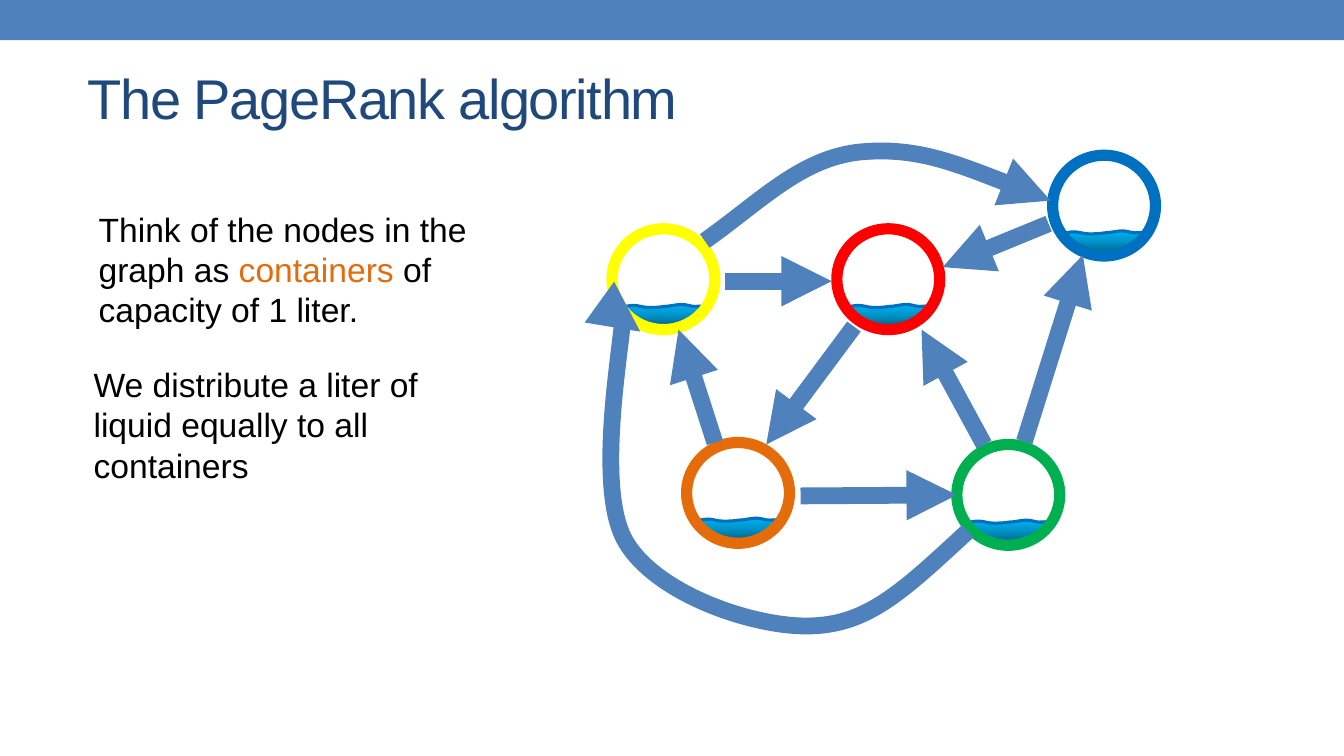
from copy import deepcopy

from lxml import etree
from pptx import Presentation
from pptx import util as u
from pptx.dml.color import RGBColor
from pptx.enum import shapes, text
from pptx.oxml.ns import qn

# Content: places are columns and rows of a grid of one-inch squares
COLUMNS, ROWS = 13.33, 7.5
BLUE, ORANGE, BLACK = "4F81BD", "E46C0A", "000000"
ARROW_WIDTH, RING_WIDTH, SURFACE_WIDTH = 12, 8, 2.25

CONTAINER_SIZE = (1.02, 1)
CONTAINERS = [  # left, top, ring colour
    (10.44, 1.54, "0070C0"),
    (9.49, 4.41, "00B050"),
    (6.81, 4.39, ORANGE),
    (6.07, 2.27, "FFFF00"),
    (8.3, 2.27, "FF0000"),
]

# Liquid outline, measured from its own corner: start, then cubic curves
LIQUID_OFFSET = (0.1, 0.75)
LIQUID_COLOURS = [(0, "00688E"), (0.5, "0094CA"), (1, "00B0F0")]
LIQUID = [
    (0, 0.03),
    (0.03, 0.02), (0.07, 0.01), (0.12, 0.01),
    (0.16, 0.01), (0.21, 0.03), (0.26, 0.03),
    (0.31, 0.03), (0.36, 0.03), (0.42, 0.02),
    (0.47, 0.02), (0.54, 0), (0.59, 0),
    (0.64, 0), (0.68, 0.02), (0.72, 0.02),
    (0.76, 0.02), (0.82, 0.01), (0.84, 0.02),
    (0.85, 0.03), (0.81, 0.06), (0.8, 0.07),
    (0.78, 0.09), (0.76, 0.1), (0.73, 0.12),
    (0.7, 0.13), (0.67, 0.15), (0.64, 0.17),
    (0.61, 0.18), (0.56, 0.2), (0.53, 0.2),
    (0.49, 0.2), (0.45, 0.21), (0.41, 0.21),
    (0.37, 0.21), (0.31, 0.2), (0.27, 0.2),
    (0.23, 0.19), (0.2, 0.18), (0.18, 0.17),
    (0.15, 0.16), (0.14, 0.15), (0.12, 0.14),
    (0.09, 0.12), (0.05, 0.09), (0.04, 0.08),
]

STRAIGHT_LINKS = [  # start, arrow tip
    ((10.4, 2.22), (9.35, 2.65)),
    ((10.16, 4.38), (10.74, 2.53)),
    ((9.76, 4.41), (9.14, 3.27)),
    ((7.94, 4.92), (9.49, 4.91)),
    ((7.09, 4.39), (6.73, 3.27)),
    ((7.19, 2.79), (8.25, 2.79)),
    ((8.47, 3.24), (7.6, 4.41)),
]
CURVED_LINKS = [  # start, then cubic curves
    [(6.99, 2.39), (7.53, 2.01), (7.93, 1.58), (8.51, 1.51),
     (9.08, 1.45), (9.76, 1.72), (10.42, 1.99)],
    [(9.6, 5.27), (8.96, 5.86), (8.62, 6.19), (8.05, 6.21),
     (7.49, 6.23), (6.52, 5.9), (6.21, 5.38),
     (5.9, 4.87), (6.16, 3.48), (6.18, 3.13),
     (6.21, 2.78), (6.3, 3.27), (6.35, 3.29)],
]

TITLE = [("The PageRank algorithm", "1F497D")]
CONTAINER_NOTE = [
    ("Think of the nodes in the graph as ", BLACK),
    ("containers", ORANGE),
    (" of capacity of 1 liter.", BLACK),
]
LIQUID_NOTE = [("We distribute a liter of liquid equally to all containers", BLACK)]

presentation = Presentation()
presentation.slide_width = u.Inches(COLUMNS)
presentation.slide_height = u.Inches(ROWS)
slide = presentation.slides.add_slide(presentation.slide_layouts[6])


def colour(code):
    return RGBColor.from_string(code)


def cells(*lengths):
    return [u.Inches(length) for length in lengths]


def set_line(shape, code, width):
    shape.line.color.rgb = colour(code)
    shape.line.width = u.Pt(width)


def add_arrowhead(shape):
    etree.SubElement(shape.line._get_or_add_ln(), qn("a:tailEnd"), type="triangle")


def curve_extent(values, steps=40):
    """Return the least and greatest value along a chain of cubic curves."""
    reached = []
    for first in range(0, len(values) - 1, 3):
        a, b, c, d = values[first:first + 4]
        for t in (step / steps for step in range(steps + 1)):
            s = 1 - t
            reached.append(a * s**3 + 3 * b * t * s**2 + 3 * c * t**2 * s + d * t**3)
    return round(min(reached)), round(max(reached))


def add_curve(points, code, width):
    start, *rest = [cells(*point) for point in points]
    builder = slide.shapes.build_freeform(*start, scale=1)
    builder.add_line_segments(rest, close=False)
    shape = builder.convert_to_shape()

    # Fit the frame to the drawn curve
    (left, right), (top, bottom) = map(curve_extent, zip(start, *rest))
    shape.left, shape.top = left, top
    shape.width, shape.height = right - left, bottom - top
    outline = next(shape._element.iter(qn("a:path")))
    outline.set("w", str(right - left))
    outline.set("h", str(bottom - top))
    marks = list(outline.iter(qn("a:pt")))
    for mark, (x, y) in zip(marks, [start, *rest]):
        mark.set("x", str(x - left))
        mark.set("y", str(y - top))

    # Group the marks by three as cubic curves
    for segment in outline.findall(qn("a:lnTo")):
        outline.remove(segment)
    for first in range(1, len(marks), 3):
        etree.SubElement(outline, qn("a:cubicBezTo")).extend(marks[first:first + 3])

    shape.shadow.inherit = False
    shape.fill.background()
    set_line(shape, code, width)
    return shape


def fill_with_liquid(shape):
    shape.fill.gradient()
    shape.fill.gradient_angle = 90
    first = shape.fill.gradient_stops[0]._gs
    first.addnext(deepcopy(first))
    for stop, (position, code) in zip(shape.fill.gradient_stops, LIQUID_COLOURS):
        stop.position = position
        stop.color.rgb = colour(code)


def add_text(runs, left, top, width, height, size=24, wrap=True, spacing=None):
    box = slide.shapes.add_textbox(*cells(left, top, width, height))
    box.text_frame.word_wrap = wrap
    box.text_frame.auto_size = text.MSO_AUTO_SIZE.SHAPE_TO_FIT_TEXT
    paragraph = box.text_frame.paragraphs[0]
    for words, code in runs:
        run = paragraph.add_run()
        run.text = words
        run.font.name = "Arial"
        run.font.size = u.Pt(size)
        run.font.color.rgb = colour(code)
        if spacing is not None:
            run.font._element.set("spc", str(spacing * 100))


# Top band
band = slide.shapes.add_shape(shapes.MSO_SHAPE.RECTANGLE, *cells(0, 0, COLUMNS, 0.4))
band.shadow.inherit = False
band.fill.solid()
band.fill.fore_color.rgb = colour(BLUE)
band.line.fill.background()

# Liquid in each container
for left, top, _ in CONTAINERS:
    corner_x, corner_y = left + LIQUID_OFFSET[0], top + LIQUID_OFFSET[1]
    liquid = add_curve([(corner_x + x, corner_y + y) for x, y in LIQUID],
                       "0070C0", SURFACE_WIDTH)
    fill_with_liquid(liquid)

# Container rings
for left, top, code in CONTAINERS:
    ring = slide.shapes.add_shape(shapes.MSO_SHAPE.OVAL, *cells(left, top, *CONTAINER_SIZE))
    ring.shadow.inherit = False
    ring.fill.background()
    set_line(ring, code, RING_WIDTH)

# Links between containers
for start, tip in STRAIGHT_LINKS:
    link = slide.shapes.add_connector(shapes.MSO_CONNECTOR.STRAIGHT, *cells(*start, *tip))
    set_line(link, BLUE, ARROW_WIDTH)
    add_arrowhead(link)
    etree.SubElement(link._element.spPr, qn("a:effectLst"))
for points in CURVED_LINKS:
    add_arrowhead(add_curve(points, BLUE, ARROW_WIDTH))

# Title and notes
add_text(TITLE, 0.77, 0.58, 6.1, 0.77, size=40, wrap=False, spacing=-1)
add_text(CONTAINER_NOTE, 0.88, 2.02, 3.93, 1.31)
add_text(LIQUID_NOTE, 0.83, 3.56, 4.1, 1.31)

presentation.save("out.pptx")
